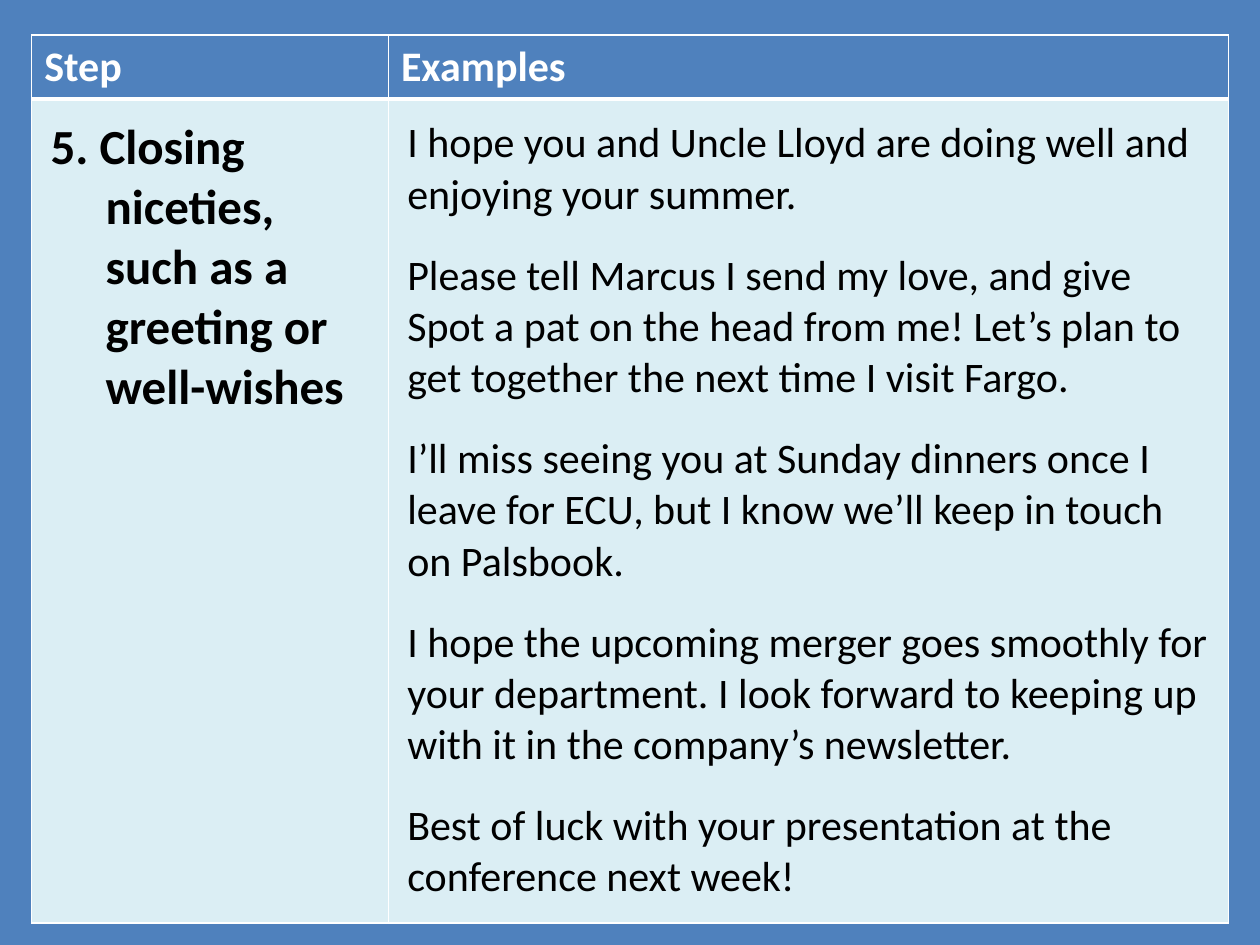
import pptx
import pptx.dml.color
import pptx.oxml
import pptx.oxml.ns
import pptx.util

Cm = pptx.util.Cm
Pt = pptx.util.Pt

COLORS = {"blue": "4F81BD", "pale": "DBEEF4", "white": "FFFFFF", "black": "000000"}
FONT = "Calibri"

HEADERS = ["Step", "Examples"]
STEP = "5. Closing\vniceties,\vsuch as a\vgreeting or\vwell-wishes"
EXAMPLES = [
    "I hope you and Uncle Lloyd are doing well and enjoying your summer.",
    "Please tell Marcus I send my love, and give Spot a pat on the head from me! "
    "Let’s plan to get together the next time I visit Fargo.",
    "I’ll miss seeing you at Sunday dinners once I leave for ECU, "
    "but I know we’ll keep in touch on Palsbook.",
    "I hope the upcoming merger goes smoothly for your department. "
    "I look forward to keeping up with it in the company’s newsletter.",
    "Best of luck with your presentation at the conference next week!",
]


def rgb(name):
    return pptx.dml.color.RGBColor.from_string(COLORS[name])


def write(tf, paragraphs, size=24, color="black", bold=False, gap=0, hanging=0):
    """Fill a text frame; gap is in points, hanging in centimetres."""
    for i, text in enumerate(paragraphs):
        p = tf.paragraphs[0] if i == 0 else tf.add_paragraph()
        p.text = text
        if i:
            p.space_before = Pt(gap)
        if hanging:
            pPr = p._p.get_or_add_pPr()
            pPr.set("marL", str(Cm(hanging)))
            pPr.set("indent", str(-Cm(hanging)))
        for r in p.runs:
            r.font.name = FONT
            r.font.size = Pt(size)
            r.font.bold = bold
            r.font.color.rgb = rgb(color)


def set_borders(cell, **widths):
    """Draw white borders; widths in points override 1 pt for L, R, T or B."""
    tcPr = cell._tc.get_or_add_tcPr()
    for i, side in enumerate("LRTB"):
        ln = pptx.oxml.parse_xml(
            f'<a:ln{side} {pptx.oxml.ns.nsdecls("a")} w="{Pt(widths.get(side, 1))}">'
            f'<a:solidFill><a:srgbClr val="{COLORS["white"]}"/></a:solidFill>'
            f'</a:ln{side}>')
        tcPr.insert(i, ln)


def style_cell(cell, fill, margin=None, **widths):
    cell.fill.solid()
    cell.fill.fore_color.rgb = rgb(fill)
    if margin is not None:
        cell.margin_left = cell.margin_right = Cm(margin)
        cell.margin_top = cell.margin_bottom = Cm(margin)
    set_borders(cell, **widths)


def add_steps_table(s):
    col_widths, row_heights = [7.19, 16.94], [1.27, 16.61]
    table = s.shapes.add_table(2, 2, Cm(0.64), Cm(0.71), Cm(sum(col_widths)),
                               Cm(sum(row_heights))).table
    for col, width in zip(table.columns, col_widths):
        col.width = Cm(width)
    for row, height in zip(table.rows, row_heights):
        row.height = Cm(height)

    for c, header in enumerate(HEADERS):
        style_cell(table.cell(0, c), "blue", B=3)
        write(table.cell(0, c).text_frame, [header], color="white", bold=True)
        style_cell(table.cell(1, c), "pale", margin=0.38, T=3)
    write(table.cell(1, 0).text_frame, [STEP], size=28, bold=True, hanging=1.11)
    write(table.cell(1, 1).text_frame, EXAMPLES, gap=17)


def main():
    prs = pptx.Presentation()
    prs.slide_width, prs.slide_height = Cm(25.4), Cm(19.05)
    s = prs.slides.add_slide(prs.slide_layouts[6])
    s.background.fill.solid()
    s.background.fill.fore_color.rgb = rgb("blue")
    add_steps_table(s)
    prs.save("out.pptx")


if __name__ == "__main__":
    main()
